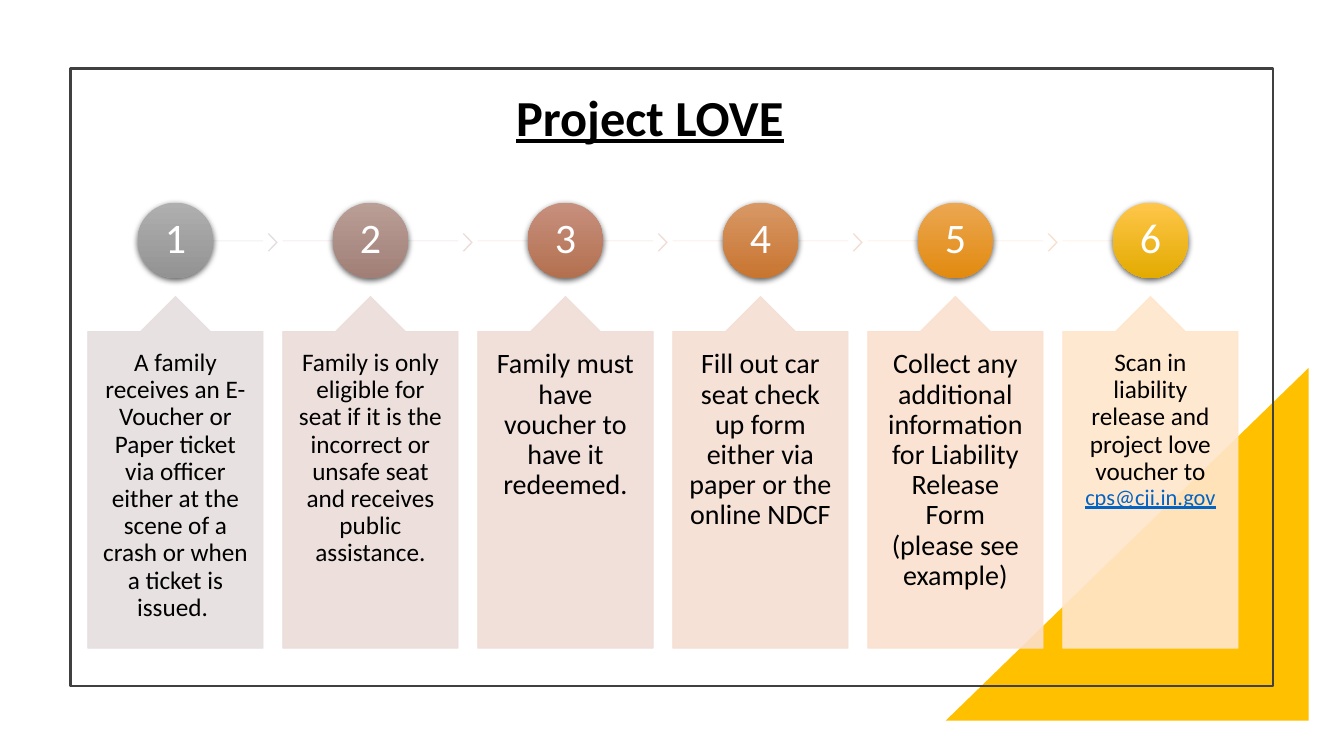
from pptx import Presentation
from pptx import util as u
from pptx.dml.color import RGBColor
from pptx.enum import shapes, text
from pptx.oxml import parse_xml
from pptx.oxml.ns import nsdecls

WHITE = RGBColor(0xFF, 0xFF, 0xFF)
BLACK = RGBColor(0x00, 0x00, 0x00)
FRAME = RGBColor(0x40, 0x40, 0x40)
GOLD = RGBColor(0xFF, 0xC0, 0x00)
LINK = RGBColor(0x05, 0x63, 0xC1)

# Badge top, badge bottom, pale card colour
STEP_COLORS = [[RGBColor.from_string(c) for c in row.split()] for row in (
    "AFAFAF 939393 E5DEDE",
    "BA9F97 A17F77 EADCD9",
    "C7907E B3704F F0DDD6",
    "D89866 C87530 F4DED2",
    "ECA752 E18A0F FAE0CE",
    "FFC64B E3AB00 FFE6CB",
)]

# Each step is a list of (text, size, format) runs
STEPS = [
    [("A family receives an E-Voucher or Paper ticket via officer either at the "
      "scene of a crash or when a ticket is issued. ", 18, {})],
    [("Family is only eligible for seat if it is the incorrect or unsafe seat "
      "and receives public assistance.", 18, {})],
    [("Family must have voucher to have it redeemed.", 20, {})],
    [("Fill out car seat check up form either via paper or the online NDCF", 20, {})],
    [("Collect any additional information for Liability Release Form "
      "(please see example)", 20, {})],
    [("Scan in liability release and project love voucher to ", 18, {}),
     ("cps@cji.in.gov", 16, {"color": LINK, "underline": True})],
]

LEFT, CARD_W, BADGE = 0.87, 1.74, 0.75
PITCH = (10.54 - LEFT) / 5
LINE_Y = 2.39


class Deck:
    font = "Calibri"

    def __init__(self, prs):
        self.s = prs.slides.add_slide(prs.slide_layouts[6])

    def fade(self, element):
        """Make every solid colour in the element 90% opaque."""
        for clr in element.spPr.iter("{*}srgbClr"):
            clr.append(parse_xml(f'<a:alpha {nsdecls("a")} val="90000"/>'))

    def shape(self, kind, box, fill=None, line=None, width=0.5, adj=(), faded=False):
        sp = self.s.shapes.add_shape(kind, *map(u.Inches, box))
        sp.shadow.inherit = False
        for i, value in enumerate(adj):
            sp.adjustments[i] = value
        if fill is None:
            sp.fill.background()
        else:
            sp.fill.solid()
            sp.fill.fore_color.rgb = fill
        if line is None:
            sp.line.fill.background()
        else:
            sp.line.color.rgb = line
            sp.line.width = u.Pt(width)
        if faded:
            self.fade(sp._element)
        return sp

    def badge(self, box, top, bottom):
        sp = self.shape(shapes.MSO_SHAPE.OVAL, box, top)
        sp.fill.gradient()
        sp.fill.gradient_angle = 270
        for stop, color in zip(sp.fill.gradient_stops, (top, bottom)):
            stop.color.rgb = color
        sp._element.spPr.find("{*}effectLst").append(parse_xml(
            f'<a:outerShdw {nsdecls("a")} blurRad="57150" dist="19050" dir="5400000" '
            'algn="ctr" rotWithShape="0"><a:srgbClr val="000000">'
            '<a:alpha val="63000"/></a:srgbClr></a:outerShdw>'))
        return sp

    def line(self, x1, x2, y, color):
        c = self.s.shapes.add_connector(
            shapes.MSO_CONNECTOR.STRAIGHT, *map(u.Inches, (x1, y, x2, y)))
        c.line.color.rgb = color
        c.line.width = u.Pt(0.5)
        self.fade(c._element)
        c._element.spPr.append(parse_xml(f'<a:effectLst {nsdecls("a")}/>'))

    def label(self, sp, runs, anchor, inset, spacing=0.9):
        tf = sp.text_frame
        frame = {"word_wrap": True, "vertical_anchor": anchor,
                 "margin_left": u.Inches(inset[0]), "margin_right": u.Inches(inset[0]),
                 "margin_top": u.Inches(inset[1]), "margin_bottom": u.Inches(inset[1])}
        for name, value in frame.items():
            setattr(tf, name, value)
        p = tf.paragraphs[0]
        p.alignment = text.PP_ALIGN.CENTER
        p.line_spacing = spacing
        for words, size, extra in runs:
            r = p.add_run()
            r.text = words
            style = {"name": self.font, "size": u.Pt(size), "color": BLACK, **extra}
            r.font.color.rgb = style.pop("color")
            for name, value in style.items():
                setattr(r.font, name, value)

    def textbox(self, box, runs):
        sp = self.s.shapes.add_textbox(*map(u.Inches, box))
        self.label(sp, runs, text.MSO_ANCHOR.TOP, (0.1, 0.05), 1.0)


def main():
    prs = Presentation()
    prs.slide_width, prs.slide_height = u.Inches(13.33), u.Inches(7.5)
    deck = Deck(prs)
    kinds = shapes.MSO_SHAPE

    # Corner triangle and frame
    corner = deck.shape(kinds.RIGHT_TRIANGLE, (9.38, 3.65, 3.6, 3.5), GOLD)
    corner._element.spPr.xfrm.set("flipH", "1")
    deck.shape(kinds.RECTANGLE, (0.7, 0.68, 11.93, 6.13), line=FRAME, width=1.5)

    # Steps: line, chevron, numbered badge and card
    last = len(STEPS) - 1
    for i, (runs, (top, bottom, pale)) in enumerate(zip(STEPS, STEP_COLORS)):
        x = LEFT + i * PITCH
        middle = x + CARD_W / 2
        deck.line(middle if i == 0 else x, middle if i == last else x + CARD_W,
                  LINE_Y, pale)
        if i < last:
            deck.shape(kinds.CHEVRON, (x + 1.79, 2.32, 0.09, 0.17), pale, pale,
                       adj=[0.9], faded=True)
        badge = deck.badge((middle - BADGE / 2, 2.01, BADGE, BADGE), top, bottom)
        deck.label(badge, [(str(i + 1), 30, {"color": WHITE})],
                   text.MSO_ANCHOR.MIDDLE, (0.03, 0.03))
        card = deck.shape(kinds.UP_ARROW_CALLOUT, (x, 2.94, CARD_W, 3.49), pale, pale,
                          adj=(0.5, 0.2, 0.2, 1), faded=True)
        deck.label(card, runs, text.MSO_ANCHOR.TOP, (0.14, 0.18))

    # Title
    deck.textbox((0.7, 0.8, 11.49, 0.71),
                 [("Project LOVE", 36, {"bold": True, "underline": True})])

    prs.save("out.pptx")


if __name__ == "__main__":
    main()
